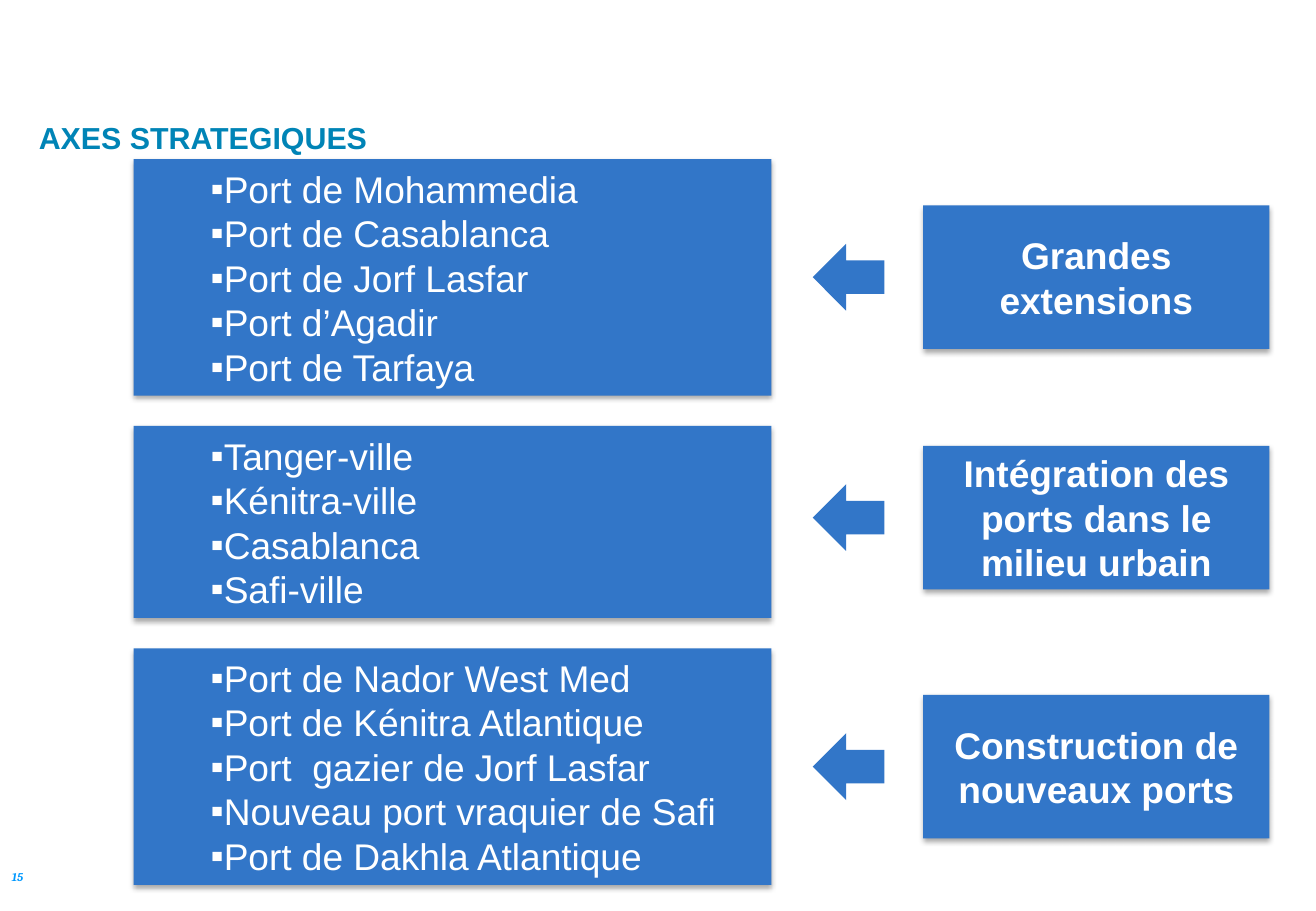
from lxml.etree import SubElement
from pptx import Presentation
from pptx.dml.color import RGBColor
from pptx.enum.shapes import MSO_SHAPE
from pptx.enum.text import MSO_ANCHOR, MSO_AUTO_SIZE, PP_ALIGN
from pptx.oxml.ns import qn
from pptx.util import Pt

COLORS = {"box": "3276C8", "text": "FFFFFF", "title": "0084B6",
          "page": "0099FF", "shade": "000000"}
LINE = 26.4
GAP = 18
ROWS = [
    ("Grandes extensions", 164.3,
     ["Port de Mohammedia", "Port de Casablanca", "Port de Jorf Lasfar",
      "Port d’Agadir", "Port de Tarfaya"]),
    ("Intégration des ports dans le milieu urbain", 306.8,
     ["Tanger-ville", "Kénitra-ville", "Casablanca", "Safi-ville"]),
    ("Construction de nouveaux ports", 454.4,
     ["Port de Nador West Med", "Port de Kénitra Atlantique",
      "Port  gazier de Jorf Lasfar", "Nouveau port vraquier de Safi",
      "Port de Dakhla Atlantique"]),
]


def place(shape, left, top, width, height):
    shape.left, shape.top = Pt(left), Pt(top)
    shape.width, shape.height = Pt(width), Pt(height)


def paint(shape):
    shape.fill.solid()
    shape.fill.fore_color.rgb = RGBColor.from_string(COLORS["box"])
    shape.line.fill.background()
    shape.shadow.inherit = False


def shade(shape):
    effects = shape.element.spPr.find(qn("a:effectLst"))
    outer = SubElement(effects, qn("a:outerShdw"), blurRad=str(Pt(3.1)),
                       dist=str(Pt(1.8)), dir="5400000", rotWithShape="0")
    color = SubElement(outer, qn("a:srgbClr"), val=COLORS["shade"])
    SubElement(color, qn("a:alpha"), val="35000")


def bullet(para):
    props = para._p.get_or_add_pPr()
    props.set("marL", str(Pt(38.5)))
    props.set("indent", "0")
    SubElement(props, qn("a:buFont"), typeface="Arial")
    SubElement(props, qn("a:buChar"), char="▪")


def write(shape, text, size, color, align, bold=False, name="Arial",
          italic=False, lead=None, marks=False):
    frame = shape.text_frame
    frame.text = text
    frame.word_wrap = True
    frame.auto_size = MSO_AUTO_SIZE.NONE
    frame.vertical_anchor = MSO_ANCHOR.MIDDLE
    for para in frame.paragraphs:
        if marks:
            bullet(para)
        para.alignment = align
        para.space_before = Pt(0)
        if lead:
            para.line_spacing = Pt(lead)
        for run in para.runs:
            font = run.font
            font.name, font.size = name, Pt(size)
            font.bold, font.italic = bold, italic
            font.color.rgb = RGBColor.from_string(COLORS[color])


def add_list(holder, items, top, height):
    place(holder, 79.2, top, 378, height)
    paint(holder)
    shade(holder)
    write(holder, "\n".join(items), 22, "text", PP_ALIGN.JUSTIFY,
          lead=LINE, marks=True)


def add_label(slide, text, mid):
    label = slide.shapes.add_shape(MSO_SHAPE.RECTANGLE, Pt(547.2),
                                   Pt(mid - 42.5), Pt(205.2), Pt(85))
    paint(label)
    shade(label)
    write(label, text, 22, "text", PP_ALIGN.CENTER, bold=True, lead=LINE)


def add_arrow(slide, mid):
    arrow = slide.shapes.add_shape(MSO_SHAPE.LEFT_ARROW, Pt(481.7),
                                   Pt(mid - 19.8), Pt(42.5), Pt(39.6))
    paint(arrow)


def add_page(slide, text):
    box = slide.shapes.add_textbox(Pt(0), Pt(511.9), Pt(42.5), Pt(15.8))
    write(box, text, 7, "page", PP_ALIGN.LEFT, bold=True,
          name="Cambria", italic=True)


def main():
    deck = Presentation()
    deck.slide_width, deck.slide_height = Pt(780), Pt(540)
    slide = deck.slides.add_slide(deck.slide_layouts[4])
    title, *bodies = slide.placeholders
    place(title, 15.8, 66.2, 708.5, 31)
    write(title, "AXES STRATEGIQUES", 18, "title", PP_ALIGN.LEFT, bold=True)

    top = 94.3
    for body, (text, mid, items) in zip(bodies, ROWS):
        height = LINE * len(items) + 8.2
        add_list(body, items, top, height)
        add_label(slide, text, mid)
        add_arrow(slide, mid)
        top += height + GAP

    for spare in bodies[len(ROWS):]:
        spare.element.getparent().remove(spare.element)
    add_page(slide, "15")
    deck.save("out.pptx")


if __name__ == "__main__":
    main()
